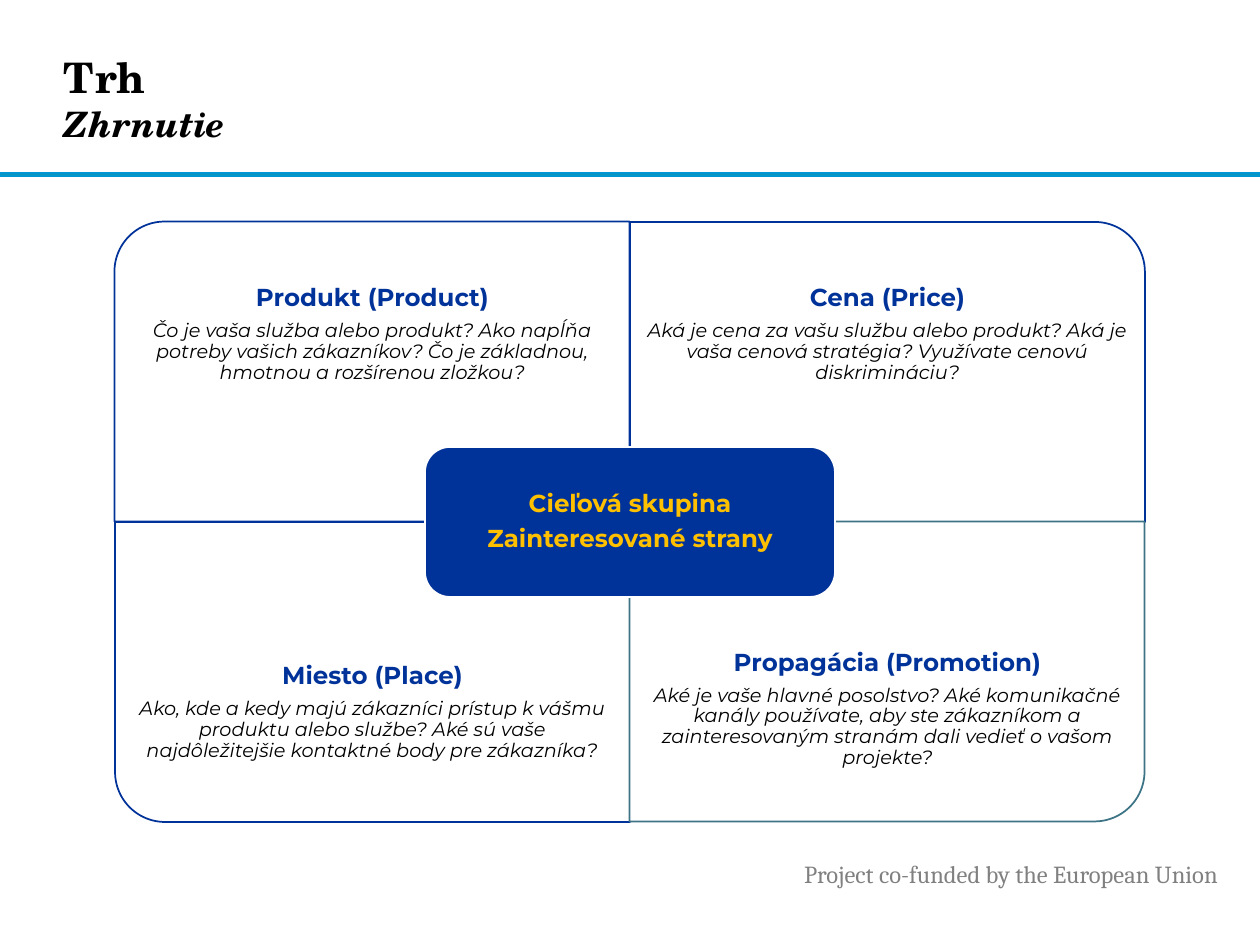
from dataclasses import dataclass

from pptx import Presentation
from pptx.dml.color import RGBColor
from pptx.enum.shapes import MSO_SHAPE as Shape
from pptx.enum.text import MSO_ANCHOR as Anchor, MSO_AUTO_SIZE as AutoSize, PP_ALIGN as Align
from pptx.util import Emu, Pt

PX_PER_INCH = 126


def px(length):
    return Emu(length * 914400 // PX_PER_INCH)


@dataclass(frozen=True)
class Theme:
    black: str = "000000"
    white: str = "FFFFFF"
    grey: str = "808080"
    blue: str = "003399"
    teal: str = "3C7486"
    gold: str = "FFC000"
    bar_fill: str = "0C94B7"
    bar_line: str = "0096D3"
    title_font: str = "TeX Gyre Schola"
    body_font: str = "Montserrat"
    footer_font: str = "Cambria"
    title_size: int = 24
    subtitle_size: int = 20
    heading_size: int = 14
    body_size: int = 11


class SlideBuilder:
    def __init__(self, deck, theme):
        self.theme = theme
        self.page = deck.slides.add_slide(deck.slide_layouts[5])

    def span(self, para, text, font, size, color, bold=False, italic=False):
        span = para.add_run()
        span.text = text
        span.font.name = font
        span.font.size = Pt(size)
        span.font.bold = bold
        span.font.italic = italic
        span.font.color.rgb = RGBColor.from_string(color)

    def frame(self, box, inset, anchor):
        frame = box.text_frame
        frame.word_wrap = True
        frame.auto_size = AutoSize.NONE
        frame.vertical_anchor = anchor
        frame.margin_left = frame.margin_right = px(inset)
        frame.margin_top = frame.margin_bottom = px(inset)
        return frame

    def title(self, left, top, width, height, title, subtitle):
        theme = self.theme
        box = self.page.shapes.title
        box.left, box.top, box.width, box.height = map(px, (left, top, width, height))
        para = self.frame(box, 0, Anchor.MIDDLE).paragraphs[0]
        para.alignment = Align.LEFT
        self.span(para, title, theme.title_font, theme.title_size, theme.black, bold=True)
        para.add_line_break()
        self.span(para, subtitle, theme.title_font, theme.subtitle_size, theme.black,
                  bold=True, italic=True)

    def shape(self, kind, left, top, width, height, fill, line, turn=0):
        # A quarter turn swaps the sides around the same centre
        if turn % 180:
            left, top = left + (width - height) // 2, top + (height - width) // 2
            width, height = height, width
        shape = self.page.shapes.add_shape(kind, *map(px, (left, top, width, height)))
        shape.rotation = turn
        shape.shadow.inherit = False
        shape.fill.solid()
        shape.fill.fore_color.rgb = RGBColor.from_string(fill)
        shape.line.color.rgb = RGBColor.from_string(line)
        shape.line.width = Pt(1)

    def centred_text(self, left, top, width, height, inset, lines):
        """Each line is (text, size, color, bold, italic)."""
        box = self.page.shapes.add_textbox(*map(px, (left, top, width, height)))
        frame = self.frame(box, inset, Anchor.MIDDLE)
        for index, (text, size, color, bold, italic) in enumerate(lines):
            para = frame.add_paragraph() if index else frame.paragraphs[0]
            para.alignment = Align.CENTER
            para.line_spacing = 0.9
            para.space_after = Pt(round(size * 0.35, 1))
            self.span(para, text, self.theme.body_font, size, color, bold, italic)

    def footer(self, left, top, width, height, text):
        box = self.page.shapes.add_textbox(*map(px, (left, top, width, height)))
        para = self.frame(box, 6, Anchor.TOP).paragraphs[0]
        box.text_frame.margin_left = box.text_frame.margin_right = px(13)
        self.span(para, text, self.theme.footer_font, self.theme.heading_size, self.theme.grey)


def main():
    theme = Theme()
    deck = Presentation()
    deck.slide_width, deck.slide_height = px(1260), px(945)
    slide = SlideBuilder(deck, theme)

    # Header and footer
    slide.shape(Shape.RECTANGLE, 0, 173, 1260, 3, theme.bar_fill, theme.bar_line)
    slide.footer(791, 853, 461, 43, "Project co-funded by the European Union")
    slide.title(64, 23, 916, 150, "Trh", "Zhrnutie")

    # Four quadrants: column, row, turn of the round corner, line, text shift, texts
    left, top, width, height = 115, 222, 515, 300
    text_height = 225
    quadrants = [
        (0, 0, 270, theme.blue, 0, "Produkt (Product)",
         "Čo je vaša služba alebo produkt? Ako napĺňa potreby vašich zákazníkov? "
         "Čo je základnou, hmotnou a rozšírenou zložkou?"),
        (1, 0, 0, theme.blue, 0, "Cena (Price)",
         "Aká je cena za vašu službu alebo produkt? Aká je vaša cenová stratégia? "
         "Využívate cenovú diskrimináciu?"),
        (0, 1, 180, theme.blue, 3, "Miesto (Place)",
         "Ako, kde a kedy majú zákazníci prístup k vášmu produktu alebo službe? "
         "Aké sú vaše najdôležitejšie kontaktné body pre zákazníka?"),
        (1, 1, 90, theme.teal, 0, "Propagácia (Promotion)",
         "Aké je vaše hlavné posolstvo? Aké komunikačné kány používate, "
         "aby ste zákazníkom a zainteresovaným stranám dali vedieť o vašom projekte?"
         .replace("kány", "kanály")),
    ]
    for column, row, turn, line, shift, heading, question in quadrants:
        x, y = left + column * width, top + row * height
        slide.shape(Shape.ROUND_1_RECTANGLE, x, y, width, height, theme.white, line, turn)
        text_top = y + row * (height - text_height) + shift
        slide.centred_text(x, text_top, width, text_height, 14, [
            (heading, theme.heading_size, theme.blue, True, False),
            (question, theme.body_size, theme.black, False, True),
        ])

    # Centre box
    slide.shape(Shape.ROUNDED_RECTANGLE, 425, 447, 410, 150, theme.blue, theme.white)
    slide.centred_text(432, 454, 396, 136, 8, [
        (text, theme.heading_size, theme.gold, True, False)
        for text in ("Cieľová skupina", "Zainteresované strany")
    ])

    deck.save("out.pptx")


if __name__ == "__main__":
    main()
